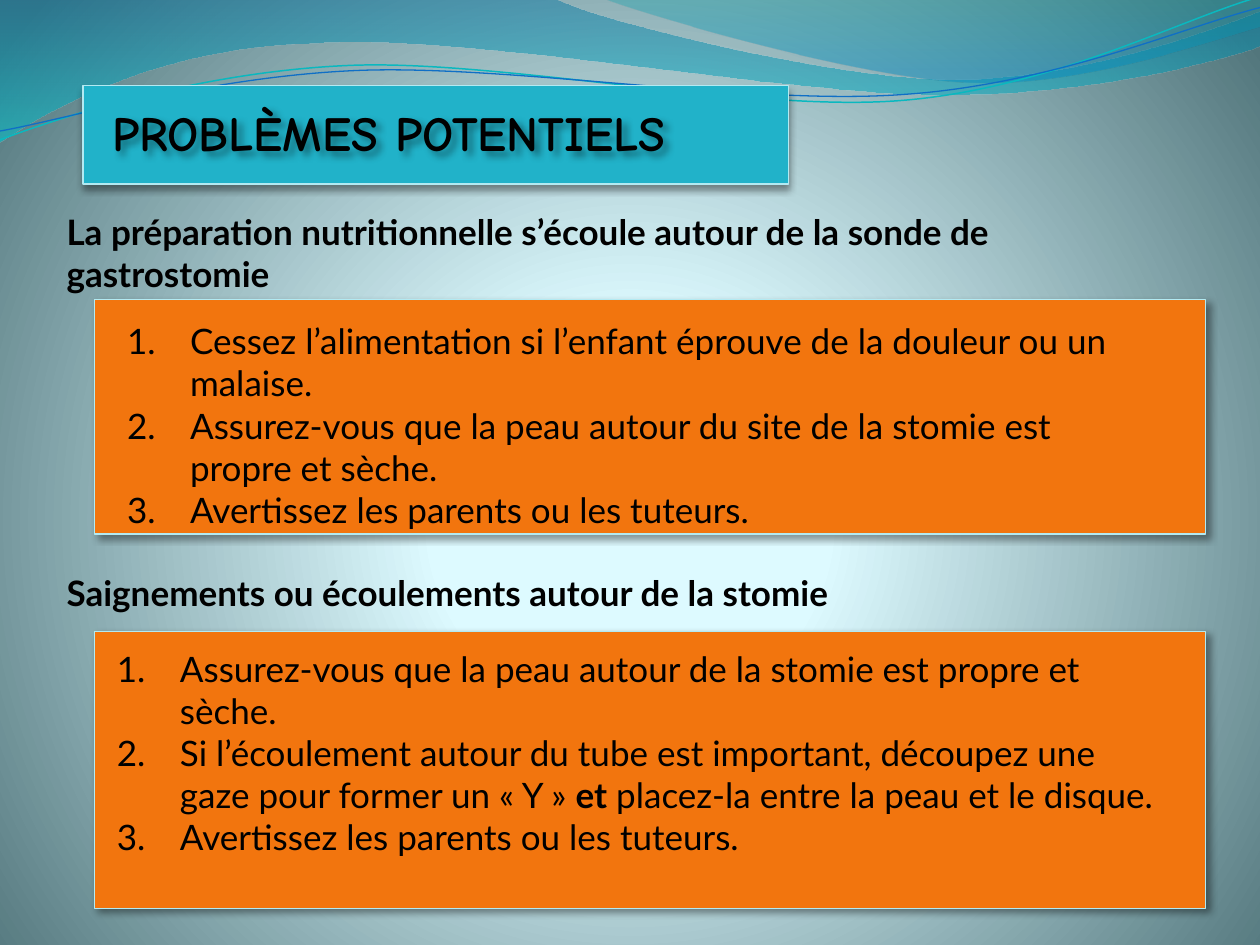
import pptx
import pptx.dml.color
import pptx.enum.shapes
import pptx.enum.text
import pptx.oxml
import pptx.oxml.ns
import pptx.util

Inches, Pt = pptx.util.Inches, pptx.util.Pt
RGBColor = pptx.dml.color.RGBColor

BLACK = RGBColor(0x00, 0x00, 0x00)
ORANGE = RGBColor(0xF2, 0x75, 0x0E)
TURQUOISE = RGBColor(0x21, 0xB2, 0xC9)
PALE_EDGE = RGBColor(0xB3, 0xEA, 0xF2)
TEAL_LINE = RGBColor(0x0A, 0xB8, 0xBF)
BLUE_LINE = RGBColor(0x0F, 0x6F, 0xC6)
BACKDROP_STOPS = [(0, RGBColor(0xDE, 0xFB, 0xFF), 100),
                  (25, RGBColor(0xDD, 0xFA, 0xFF), 100),
                  (100, RGBColor(0x52, 0x76, 0x7C), 100)]
WIDE_WAVE_STOPS = [(0, RGBColor(0x00, 0x74, 0xA1), 45),
                   (100, RGBColor(0x00, 0xC6, 0xCF), 55)]
RIGHT_WAVE_STOPS = [(0, RGBColor(0x00, 0xA1, 0xA9), 30),
                    (80, RGBColor(0x00, 0x8B, 0xBF), 45)]
DOWNWARD = '<a:lin ang="5400000" scaled="0"/>'
RADIAL = ('<a:path path="circle"><a:fillToRect l="10000" t="110000" '
          'r="10000" b="100000"/></a:path>')
BODY_FONT, TITLE_FONT = "Lato", "Comic Neue"


def make_element(tag, content=""):
    return pptx.oxml.parse_xml(
        f'<a:{tag} {pptx.oxml.ns.nsdecls("a")}>{content}</a:{tag}>')


def gradient(stops, direction):
    marks = "".join(
        f'<a:gs pos="{place * 1000}"><a:srgbClr val="{color}">'
        f'<a:alpha val="{opacity * 1000}"/></a:srgbClr></a:gs>'
        for place, color, opacity in stops)
    return make_element("gradFill", f"<a:gsLst>{marks}</a:gsLst>{direction}")


def shadow(angle):
    return make_element("effectLst", (
        f'<a:outerShdw blurRad="{Pt(4)}" dist="{Pt(3)}" dir="{angle * 60000}" '
        'algn="tl" rotWithShape="0"><a:srgbClr val="000000">'
        '<a:alpha val="40000"/></a:srgbClr></a:outerShdw>'))


def set_shadow(shape, angle):
    shape.shadow.inherit = False
    properties = shape.element.spPr
    properties.replace(properties.find(pptx.oxml.ns.qn("a:effectLst")),
                       shadow(angle))


def add_curve(slide, start, segments, closed):
    """Each segment is one end point, or the three points of a cubic."""
    builder = slide.shapes.build_freeform(*map(Inches, start))
    builder.add_line_segments(
        [tuple(map(Inches, point)) for segment in segments for point in segment],
        close=closed)
    curve = builder.convert_to_shape()
    curve.shadow.inherit = False

    # Join the three points of each cubic into one curved step
    steps = iter(curve.element.xpath(".//a:lnTo"))
    for segment in segments:
        group = [next(steps) for _ in segment]
        if len(group) == 3:
            cubic = make_element("cubicBezTo")
            group[0].addprevious(cubic)
            for step in group:
                cubic.append(step[0])
                step.getparent().remove(step)
    return curve


def add_wave(slide, start, segments, stops):
    wave = add_curve(slide, start, segments, True)
    wave.line.fill.background()
    wave.fill.background()
    no_fill = wave.element.spPr.find(pptx.oxml.ns.qn("a:noFill"))
    wave.element.spPr.replace(no_fill, gradient(stops, DOWNWARD))


def add_backdrop(slide):
    slide.background.fill.solid()
    background = slide.element.xpath(".//p:bgPr")[0]
    background.replace(background[0], gradient(BACKDROP_STOPS, RADIAL))

    # Translucent waves
    add_wave(slide, (0, 0), [
        [(4.4, -0.01)],
        [(4.76, 0.17), (6.64, 0.63), (7.58, 0.63)],
        [(8.53, 0.63), (9.58, 0.26), (10, 0.09)],
        [(10.01, 0.36)],
        [(9.83, 0.44), (8.7, 0.76), (7.46, 0.75)],
        [(6.22, 0.75), (3.82, 0.28), (2.57, 0.34)],
        [(1.29, 0.36), (0.46, 0.83), (-0.01, 1.13)]], WIDE_WAVE_STOPS)
    add_wave(slide, (4.79, -0.01), [
        [(5.09, 0.11), (6.82, 0.62), (7.69, 0.65)],
        [(8.56, 0.69), (9.61, 0.32), (10, 0.21)],
        [(10, 0)]], RIGHT_WAVE_STOPS)

    # Thin wave lines
    for color, width, start, segments in (
            (TEAL_LINE, 0.85, (0, 1.11), [
                [(0.48, 0.93), (1.58, 0.57), (2.77, 0.52)],
                [(3.95, 0.47), (5.93, 0.89), (7.13, 0.8)],
                [(8.33, 0.71), (9.38, 0.15), (9.98, -0.02)]]),
            (BLUE_LINE, 0.75, (0, 1.04), [
                [(0.47, 0.96), (1.64, 0.61), (2.83, 0.56)],
                [(4.03, 0.51), (5.97, 0.84), (7.17, 0.75)],
                [(8.36, 0.67), (9.41, 0.21), (10, 0.06)]])):
        strand = add_curve(slide, start, segments, False)
        strand.fill.background()
        strand.line.color.rgb = color
        strand.line.width = Pt(width)


def add_panel(slide, box, color, shadow_angle):
    panel = slide.shapes.add_shape(
        pptx.enum.shapes.MSO_SHAPE.RECTANGLE, *map(Inches, box))
    panel.fill.solid()
    panel.fill.fore_color.rgb = color
    panel.line.color.rgb = PALE_EDGE
    panel.line.width = Pt(0.75)
    set_shadow(panel, shadow_angle)


def format_run(run, size, font, bold):
    run.font.size = Pt(size)
    run.font.name = font
    run.font.bold = bold
    run.font.color.rgb = BLACK


def set_indent(paragraph, margin, first_line):
    properties = paragraph._p.get_or_add_pPr()
    properties.set("marL", str(Inches(margin)))
    properties.set("indent", str(Inches(first_line)))
    return properties


def add_text_box(slide, box):
    frame = slide.shapes.add_textbox(*map(Inches, box)).text_frame
    frame.word_wrap = True
    frame.auto_size = pptx.enum.text.MSO_AUTO_SIZE.SHAPE_TO_FIT_TEXT
    return frame


def add_title(slide, box):
    left, top, width, height = box
    add_panel(slide, box, TURQUOISE, 90)
    title = slide.shapes.title
    title.left, title.top = Inches(left - 0.3), Inches(top + 0.09)
    title.width, title.height = Inches(width + 1.33), Inches(height - 0.17)
    title.fill.background()
    set_shadow(title, 45)  # falls from the letters, as there is no fill
    slide.shapes.element.append(title.element)  # in front of its panel
    frame = title.text_frame
    frame.text = "PROBLÈMES POTENTIELS"
    frame.auto_size = pptx.enum.text.MSO_AUTO_SIZE.NONE
    frame.vertical_anchor = pptx.enum.text.MSO_ANCHOR.MIDDLE
    frame.margin_bottom = Inches(0.1)
    paragraph = frame.paragraphs[0]
    paragraph.alignment = pptx.enum.text.PP_ALIGN.LEFT
    set_indent(paragraph, 0.43, 0)
    format_run(paragraph.runs[0], 28, TITLE_FONT, True)


def add_section(slide, box, heading, heading_box, steps, steps_box):
    """Heading and numbered steps, both placed from the panel's corner."""
    left, top = box[:2]
    add_panel(slide, box, ORANGE, 45)

    # Heading
    dx, dy, width, height = heading_box
    frame = add_text_box(slide, (left + dx, top + dy, width, height))
    frame.text = heading
    format_run(frame.paragraphs[0].runs[0], 20, BODY_FONT, True)

    # Numbered steps; every second part of a step is bold
    dx, dy, width, height = steps_box
    frame = add_text_box(slide, (left + dx, top + dy, width, height))
    for index, parts in enumerate(steps):
        paragraph = frame.add_paragraph() if index else frame.paragraphs[0]
        number = make_element("buAutoNum")
        number.set("type", "arabicPeriod")
        set_indent(paragraph, 0.5, -0.5).append(number)
        for position, part in enumerate(parts):
            run = paragraph.add_run()
            run.text = part
            format_run(run, 20, BODY_FONT, position % 2 == 1)


def main():
    deck = pptx.Presentation()
    deck.slide_width, deck.slide_height = Inches(10), Inches(7.5)
    slide = deck.slides.add_slide(deck.slide_layouts[5])
    add_backdrop(slide)
    add_section(
        slide, (0.75, 5.01, 8.82, 2.2),
        "Saignements ou écoulements autour de la stomie",
        (-0.32, -0.52, 7.38, 0.44),
        [["Assurez-vous que la peau autour de la stomie est propre et sèche."],
         ["Si l’écoulement autour du tube est important, découpez une gaze "
          "pour former un « Y » ", "et",
          " placez-la entre la peau et le disque."],
         ["Avertissez les parents ou les tuteurs."]],
        (0.08, 0.08, 8.5, 2.12))
    add_section(
        slide, (0.75, 2.38, 8.82, 1.86),
        "La préparation nutritionnelle s’écoule autour de la sonde de gastrostomie",
        (-0.32, -0.76, 9.15, 0.77),
        [["Cessez l’alimentation si l’enfant éprouve de la douleur ou un malaise."],
         ["Assurez-vous que la peau autour du site de la stomie est propre et sèche."],
         ["Avertissez les parents ou les tuteurs."]],
        (0.16, 0.11, 8.35, 1.78))
    add_title(slide, (0.66, 0.68, 5.6, 0.78))
    deck.save("out.pptx")


if __name__ == "__main__":
    main()
